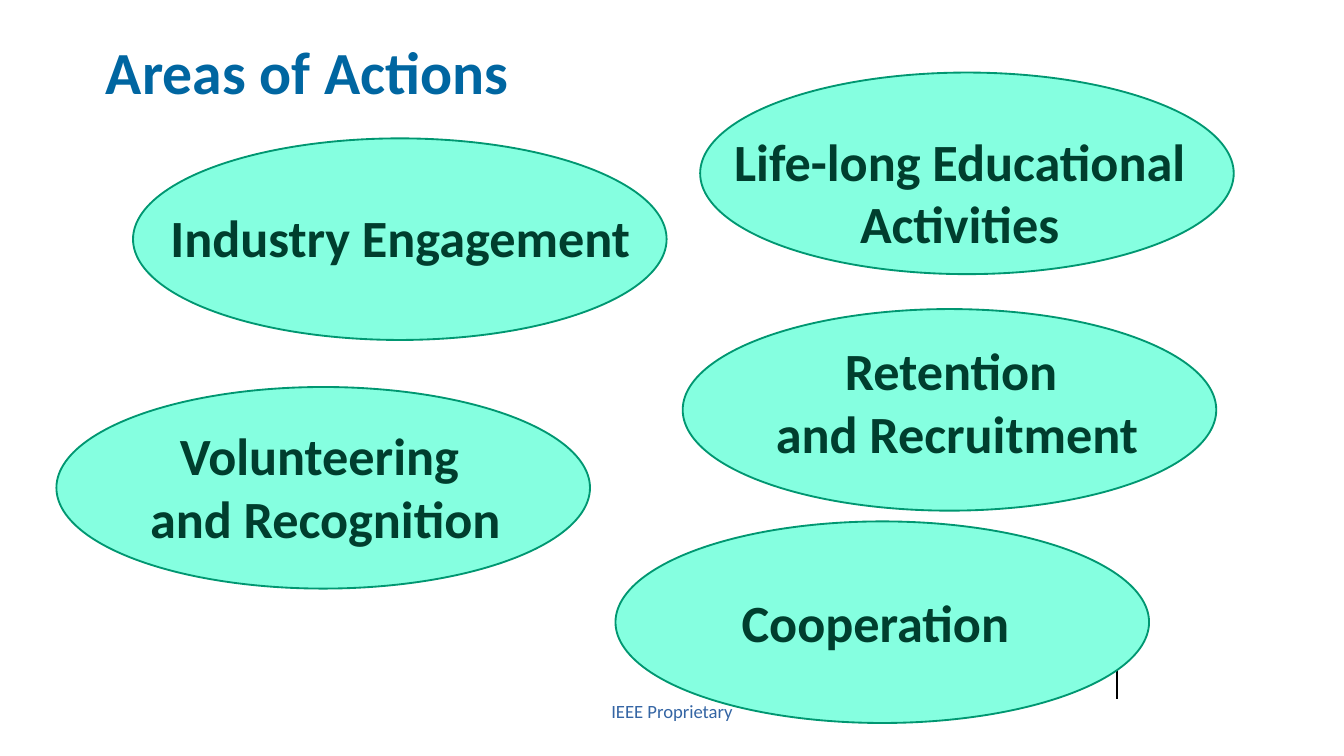
from lxml import etree
from pptx import Presentation
from pptx.dml.color import RGBColor
from pptx.enum.shapes import MSO_CONNECTOR, MSO_SHAPE
from pptx.enum.text import MSO_ANCHOR, PP_ALIGN
from pptx.oxml.ns import qn
from pptx.util import Inches, Pt

LEFT, CENTER = PP_ALIGN.LEFT, PP_ALIGN.CENTER
TOP, BOTTOM = MSO_ANCHOR.TOP, MSO_ANCHOR.BOTTOM
STRAIGHT, OVAL = MSO_CONNECTOR.STRAIGHT, MSO_SHAPE.OVAL

COLORS = {
    "title": "0066A1",
    "footer": "3465A4",
    "area_fill": "85FFE0",
    "area_line": "009771",
    "area_text": "003E2E",
    "rule": "000000",
}
FONT = "Calibri"
SLIDE_WIDTH = 10
AREA_WIDTH, AREA_HEIGHT = 3.97, 1.5


def color(name):
    return RGBColor.from_string(COLORS[name])


def add_text(shapes, box, lines, size, color_name, align=LEFT, bold=False, anchor=TOP):
    frame = shapes.add_textbox(*(Inches(v) for v in box)).text_frame
    frame.word_wrap = True
    frame.vertical_anchor = anchor
    paragraph = frame.paragraphs[0]
    paragraph.alignment = align
    for index, line in enumerate(lines):
        if index:
            paragraph.add_line_break()
        run = paragraph.add_run()
        run.text = line
        run.font.name = FONT
        run.font.size = Pt(size)
        run.font.bold = bold
        run.font.color.rgb = color(color_name)
    return paragraph


# Widescreen slide, 16:9
prs = Presentation()
prs.slide_width = Inches(SLIDE_WIDTH)
prs.slide_height = Inches(SLIDE_WIDTH * 9 / 16)
slide = prs.slides.add_slide(prs.slide_layouts[6])

# Footer rule and notice
footer_rule = slide.shapes.add_connector(
    STRAIGHT, Inches(8.31), Inches(4.96), Inches(8.31), Inches(5.2))
footer_rule.line.color.rgb = color("rule")
footer_rule.line.width = Pt(0.75)
etree.SubElement(footer_rule._element.spPr, qn("a:effectLst"))
add_text(slide.shapes, (3.23, 5.16, 3.54, 0.27), ["IEEE Proprietary"], 10, "footer", CENTER)

# Title
title = add_text(slide.shapes, (0.69, 0.46, 8.56, 0.39), ["Areas of Actions"],
                 32, "title", bold=True, anchor=BOTTOM)
title.line_spacing = 0.9

# Areas: ellipse position, label box, label lines, alignment
areas = [
    ((5.21, 0.54), (4.89, 0.91, 4.5, 1.04), ["Life-long Educational Activities"], CENTER),
    ((0.99, 1.03), (1.17, 1.48, 4.8, 0.88), ["Industry Engagement"], LEFT),
    ((0.42, 2.88), (-0.12, 3.1, 5.08, 1.04), ["Volunteering ", "and Recognition"], CENTER),
    ((5.08, 2.3), (4.72, 2.47, 4.8, 1.35), ["Retention ", "and Recruitment"], CENTER),
    ((4.58, 3.88), (5.42, 4.34, 4.8, 0.88), ["Cooperation"], LEFT),
]
for (left, top), label_box, lines, align in areas:
    area = slide.shapes.add_group_shape()
    ellipse = area.shapes.add_shape(
        OVAL, Inches(left), Inches(top), Inches(AREA_WIDTH), Inches(AREA_HEIGHT))
    ellipse.shadow.inherit = False
    ellipse.fill.solid()
    ellipse.fill.fore_color.rgb = color("area_fill")
    ellipse.line.color.rgb = color("area_line")
    ellipse.line.width = Pt(1)
    add_text(area.shapes, label_box, lines, 28, "area_text", align, bold=True)

prs.save("out.pptx")
